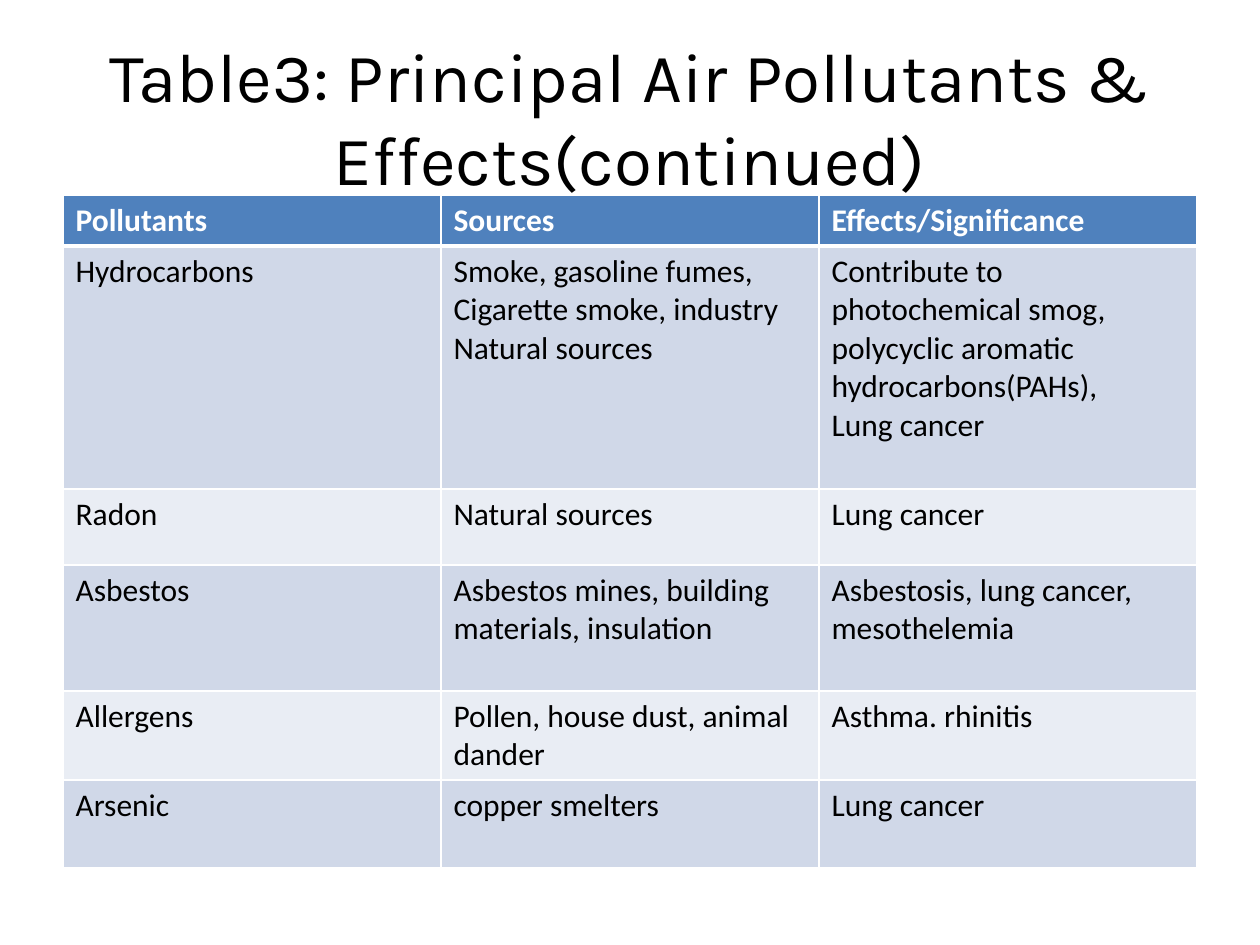
from lxml.etree import SubElement
from pptx import Presentation
from pptx.dml.color import RGBColor
from pptx.enum.text import MSO_ANCHOR, PP_ALIGN
from pptx.oxml.ns import qn
from pptx.util import Emu, Pt

PX = 914400 / 126
BLACK = RGBColor(0x00, 0x00, 0x00)
WHITE = RGBColor(0xFF, 0xFF, 0xFF)
HEADER_BLUE = RGBColor(0x4F, 0x81, 0xBD)
BAND_DARK = RGBColor(0xD0, 0xD8, 0xE8)
BAND_LIGHT = RGBColor(0xE9, 0xED, 0xF4)

COLUMN_WIDTH = 378
ROW_HEIGHTS = [51, 243, 76, 126, 89, 88]
ROWS = [
    ["Pollutants", "Sources", "Effects/Significance"],
    ["Hydrocarbons",
     "Smoke, gasoline fumes, Cigarette smoke, industry\nNatural sources",
     "Contribute to photochemical smog, polycyclic aromatic hydrocarbons(PAHs),\nLung cancer"],
    ["Radon", "Natural sources", "Lung cancer"],
    ["Asbestos", "Asbestos mines, building materials, insulation",
     "Asbestosis, lung cancer, mesothelemia"],
    ["Allergens", "Pollen, house dust, animal dander", "Asthma. rhinitis"],
    ["Arsenic", "copper smelters", "Lung cancer"],
]


def px(length):
    return Emu(round(length * PX))


def add_borders(cell, top, bottom):
    """Draw white cell edges; top and bottom are widths in points."""
    properties = cell._tc.get_or_add_tcPr()
    for side, width in (("L", 1), ("R", 1), ("T", top), ("B", bottom)):
        line = SubElement(properties, qn(f"a:ln{side}"), w=str(Pt(width)))
        fill = SubElement(line, qn("a:solidFill"))
        SubElement(fill, qn("a:srgbClr"), val=str(WHITE))


presentation = Presentation()
presentation.slide_width = px(1260)
presentation.slide_height = px(945)
slide = presentation.slides.add_slide(presentation.slide_layouts[6])

title = slide.shapes.add_textbox(px(63), px(38), px(1134), px(157))
title.text_frame.word_wrap = True
title.text_frame.vertical_anchor = MSO_ANCHOR.MIDDLE
paragraph = title.text_frame.paragraphs[0]
paragraph.text = "Table3: Principal Air Pollutants & Effects(continued)"
paragraph.alignment = PP_ALIGN.CENTER
paragraph.font.name = "Karla"
paragraph.font.size = Pt(39.6)
paragraph.font.color.rgb = BLACK

table = slide.shapes.add_table(
    len(ROWS), 3, px(63), px(195), px(3 * COLUMN_WIDTH), px(sum(ROW_HEIGHTS))
).table
for column in table.columns:
    column.width = px(COLUMN_WIDTH)

for row_index, texts in enumerate(ROWS):
    table.rows[row_index].height = px(ROW_HEIGHTS[row_index])
    is_header = row_index == 0
    if is_header:
        fill_color = HEADER_BLUE
    else:
        fill_color = BAND_DARK if row_index % 2 else BAND_LIGHT
    for column_index, text in enumerate(texts):
        cell = table.cell(row_index, column_index)
        add_borders(cell, 3 if row_index == 1 else 1, 3 if is_header else 1)
        cell.fill.solid()
        cell.fill.fore_color.rgb = fill_color
        cell.text = text
        for paragraph in cell.text_frame.paragraphs:
            paragraph.font.name = "Calibri"
            paragraph.font.size = Pt(18)
            paragraph.font.bold = is_header
            paragraph.font.color.rgb = WHITE if is_header else BLACK

presentation.save("out.pptx")
